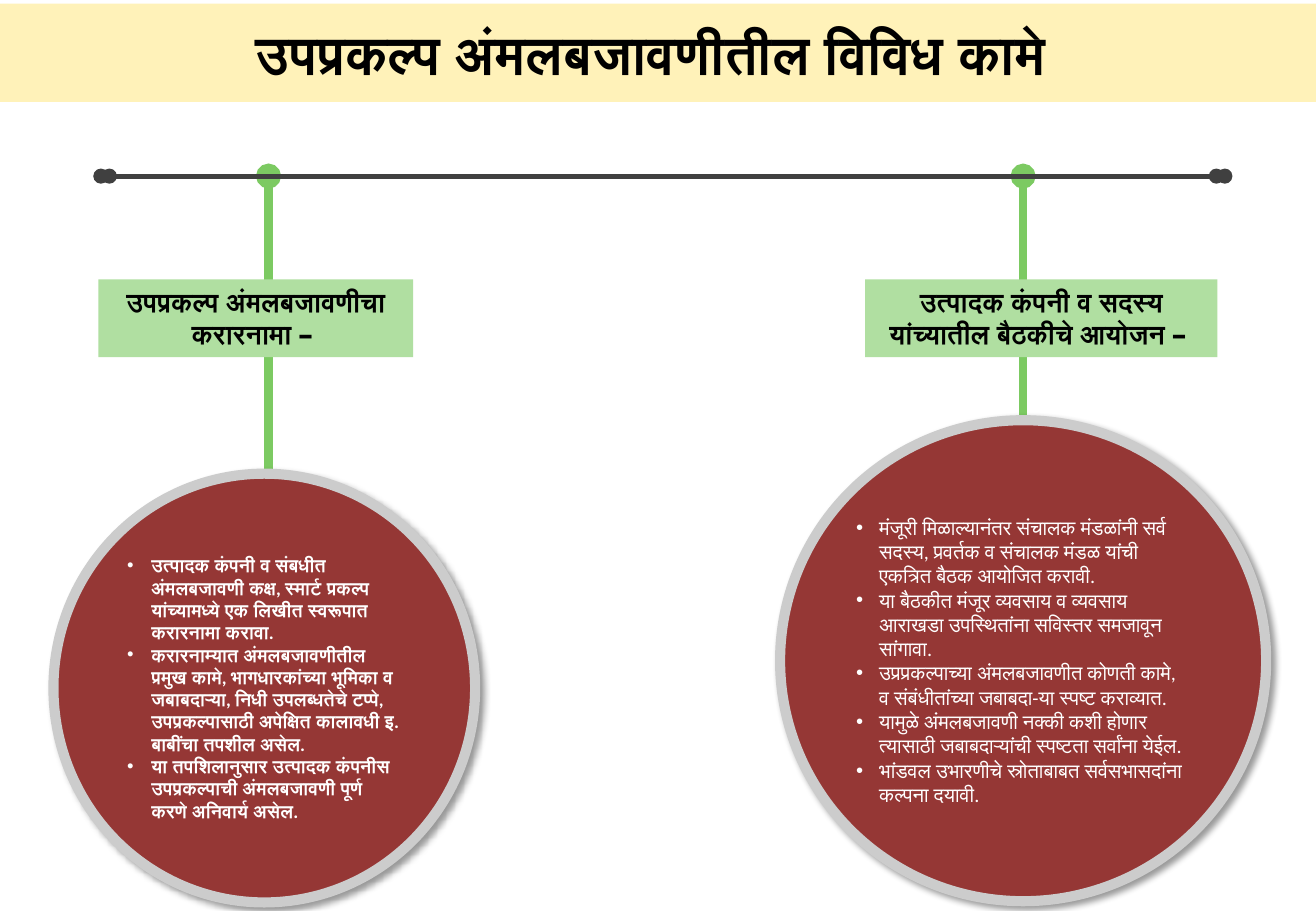
from dataclasses import dataclass

from lxml import etree
from pptx import Presentation
from pptx.dml.color import RGBColor
from pptx.enum.shapes import MSO_CONNECTOR, MSO_SHAPE
from pptx.enum.text import MSO_ANCHOR, PP_ALIGN
from pptx.oxml.ns import qn
from pptx.util import Inches, Pt

STRAIGHT = MSO_CONNECTOR.STRAIGHT
RECTANGLE, OVAL = MSO_SHAPE.RECTANGLE, MSO_SHAPE.OVAL
LEFT, CENTER = PP_ALIGN.LEFT, PP_ALIGN.CENTER
TOP, MIDDLE = MSO_ANCHOR.TOP, MSO_ANCHOR.MIDDLE


@dataclass(frozen=True)
class Theme:
    banner: str = "FFF2B9"
    axis: str = "404040"
    stem: str = "7CCA62"
    label: str = "B0DFA1"
    circle: str = "953735"
    ring: str = "CCCCCC"
    shadow: str = "000000"
    dark_text: str = "000000"
    light_text: str = "FFFFFF"
    body_font: str = "Calibri"
    label_font: str = "TeX Gyre Adventor"
    title_size: int = 32
    label_size: int = 16
    stem_width: int = 5
    axis_width: int = 3
    ring_width: int = 6


theme = Theme()
presentation = Presentation()
presentation.slide_width = Inches(10.83)
presentation.slide_height = Inches(7.5)
slide = presentation.slides.add_slide(presentation.slide_layouts[6])


def add_rod(start, end, color, width, ends):
    """Line with round markers at the named ends."""
    rod = slide.shapes.add_connector(STRAIGHT, *map(Inches, start + end))
    rod.line.color.rgb = RGBColor.from_string(color)
    rod.line.width = Pt(width)
    outline = rod.line._get_or_add_ln()
    for end_name in ends:
        etree.SubElement(outline, qn(f"a:{end_name}"), type="oval")
    etree.SubElement(rod._element.spPr, qn("a:effectLst"))


def add_panel(kind, box, fill, texts, font, size, color, bold, align, anchor,
              side_inset=0.1):
    """Filled shape without outline, one run per paragraph."""
    shape = slide.shapes.add_shape(kind, *map(Inches, box))
    shape.fill.solid()
    shape.fill.fore_color.rgb = RGBColor.from_string(fill)
    shape.line.fill.background()
    shape.shadow.inherit = False
    frame = shape.text_frame
    frame.word_wrap = True
    frame.vertical_anchor = anchor
    frame.margin_left = frame.margin_right = Inches(side_inset)
    frame.margin_top = frame.margin_bottom = Inches(0.05)
    for index, text in enumerate(texts):
        paragraph = frame.add_paragraph() if index else frame.paragraphs[0]
        paragraph.alignment = align
        run = paragraph.add_run()
        run.text = text
        run.font.name = font
        run.font.size = Pt(size)
        run.font.bold = bold
        run.font.color.rgb = RGBColor.from_string(color)
    return shape


# Each branch: stem position, label and circle
branches = [
    {
        "stem": (2.21, 4.31),
        "label_box": (0.81, 2.3, 2.59, 0.64),
        "label": "उपप्रकल्प अंमलबजावणीचा करारनामा – ",
        "circle_box": (0.44, 3.9, 3.47, 3.53),
        "size": 11, "bold": True, "indent": 0.2, "inset": 0.1,
        "points": [
            "उत्पादक कंपनी व संबधीत अंमलबजावणी कक्ष, स्मार्ट प्रकल्प यांच्यामध्ये एक लिखीत स्वरूपात करारनामा करावा.",
            "करारनाम्यात अंमलबजावणीतील प्रमुख कामे, भागधारकांच्या भूमिका व जबाबदाऱ्या, निधी उपलब्धतेचे टप्पे, उपप्रकल्पासाठी अपेक्षित कालावधी इ. बाबींचा तपशील असेल.",
            "या तपशिलानुसार उत्पादक कंपनीस उपप्रकल्पाची अंमलबजावणी पूर्ण करणे अनिवार्य असेल.",
        ],
    },
    {
        "stem": (8.42, 4.76),
        "label_box": (7.12, 2.3, 2.9, 0.64),
        "label": "उत्पादक कंपनी व सदस्य यांच्यातील बैठकीचे आयोजन – ",
        "circle_box": (6.42, 3.46, 4, 3.96),
        "size": 12, "bold": False, "indent": 0.19, "inset": 0.04,
        "points": [
            "मंजूरी मिळाल्यानंतर संचालक मंडळांनी सर्व सदस्य, प्रवर्तक व संचालक मंडळ यांची एकत्रित बैठक आयोजित करावी.",
            "या बैठकीत मंजूर व्यवसाय व व्यवसाय आराखडा उपस्थितांना सविस्तर समजावून सांगावा.",
            "उप्रप्रकल्पाच्या अंमलबजावणीत कोणती कामे, व संबंधीतांच्या जबाबदा-या स्पष्ट कराव्यात.",
            "यामुळे अंमलबजावणी नक्की कशी होणार त्यासाठी जबाबदाऱ्यांची स्पष्टता सर्वांना येईल.",
            "भांडवल उभारणीचे स्रोताबाबत सर्वसभासदांना कल्पना दयावी.",
        ],
    },
]

# Stems hanging from the axis, then the doubled axis
AXIS_Y = 1.45
for branch in branches:
    stem_x, stem_bottom = branch["stem"]
    add_rod((stem_x, stem_bottom), (stem_x, AXIS_Y), theme.stem,
            theme.stem_width, ["tailEnd"])
for axis_left in (0.83, 0.9):
    add_rod((axis_left, AXIS_Y), (axis_left + 9.18, AXIS_Y), theme.axis,
            theme.axis_width, ["headEnd", "tailEnd"])

# Circles with bullets and a soft shadow, and their labels
for branch in branches:
    circle = add_panel(OVAL, branch["circle_box"], theme.circle, branch["points"],
                       theme.body_font, branch["size"], theme.light_text,
                       branch["bold"], LEFT, MIDDLE, branch["inset"])
    circle.line.color.rgb = RGBColor.from_string(theme.ring)
    circle.line.width = Pt(theme.ring_width)
    effects = circle._element.spPr.find(qn("a:effectLst"))
    shadow = etree.SubElement(effects, qn("a:outerShdw"), blurRad=str(Pt(4)),
                              dist=str(Pt(3)), dir=str(45 * 60000),
                              algn="tl", rotWithShape="0")
    shadow_color = etree.SubElement(shadow, qn("a:srgbClr"), val=theme.shadow)
    etree.SubElement(shadow_color, qn("a:alpha"), val="40000")
    for paragraph in circle.text_frame.paragraphs:
        properties = paragraph._p.get_or_add_pPr()
        properties.set("marL", str(Inches(branch["indent"])))
        properties.set("indent", str(-Inches(branch["indent"])))
        etree.SubElement(properties, qn("a:buFont"), typeface="Arial")
        etree.SubElement(properties, qn("a:buChar"), char="•")

    add_panel(RECTANGLE, branch["label_box"], theme.label, [branch["label"]],
              theme.label_font, theme.label_size, theme.dark_text, True,
              CENTER, TOP)

# Title banner
add_panel(RECTANGLE, (0, 0.03, 10.83, 0.81), theme.banner,
          ["उपप्रकल्प अंमलबजावणीतील विविध कामे "], theme.body_font,
          theme.title_size, theme.dark_text, True, CENTER, MIDDLE)

presentation.save("out.pptx")
